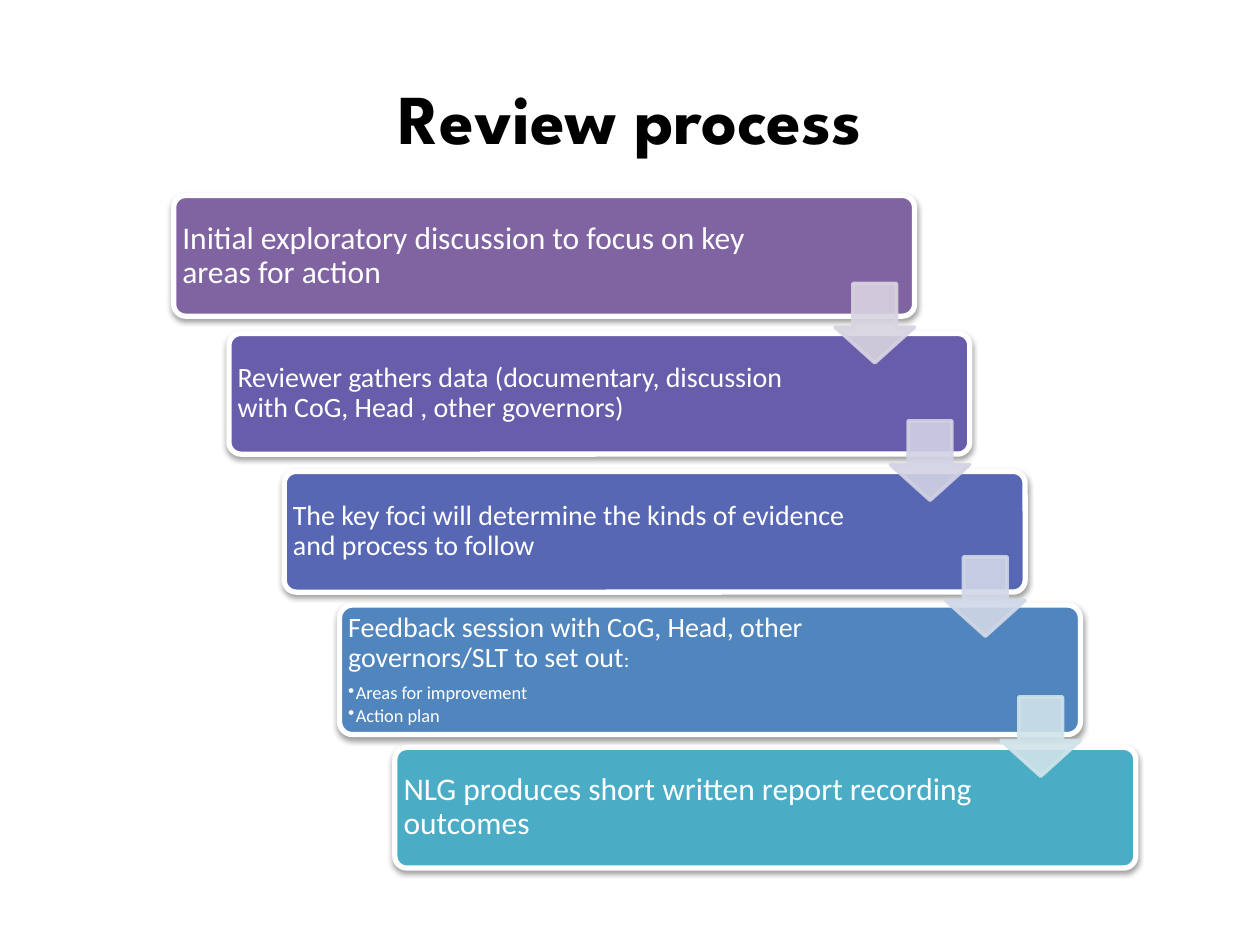
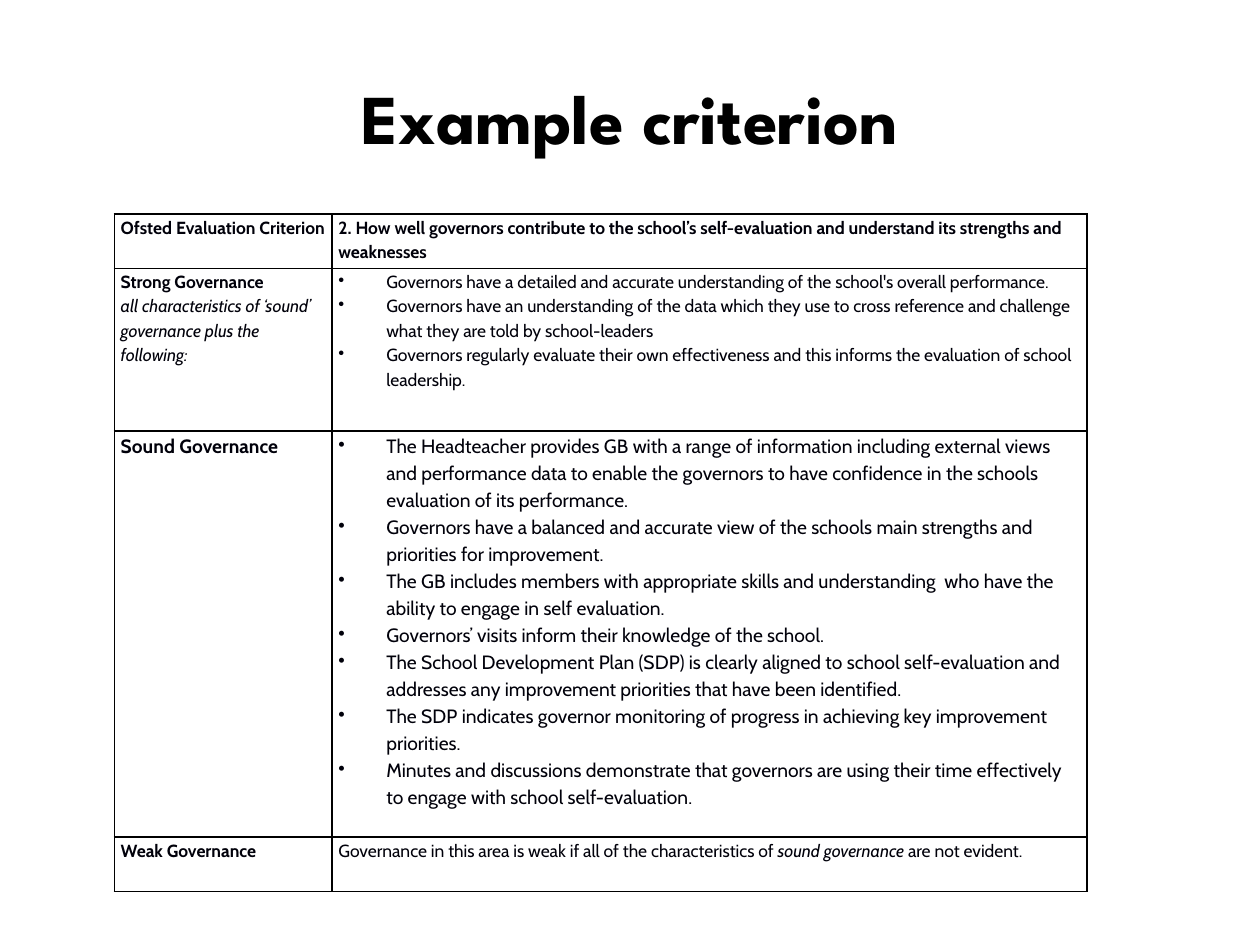
from lxml import etree
from pptx import Presentation
from pptx.dml.color import RGBColor
from pptx.enum.shapes import MSO_SHAPE
from pptx.enum.text import MSO_ANCHOR, PP_ALIGN
from pptx.oxml.ns import qn
from pptx.util import Pt

ROUND, ARROW = MSO_SHAPE.ROUNDED_RECTANGLE, MSO_SHAPE.DOWN_ARROW
MIDDLE, TOP = MSO_ANCHOR.MIDDLE, MSO_ANCHOR.TOP
LEFT, CENTER = PP_ALIGN.LEFT, PP_ALIGN.CENTER

BLACK = RGBColor(0x00, 0x00, 0x00)
WHITE = RGBColor(0xFF, 0xFF, 0xFF)
INK = RGBColor(0x00, 0x00, 0x0A)
PURPLE = RGBColor(0x80, 0x64, 0xA2)
VIOLET = RGBColor(0x68, 0x5D, 0xAB)
INDIGO = RGBColor(0x57, 0x67, 0xB4)
BLUE = RGBColor(0x51, 0x85, 0xBD)
TEAL = RGBColor(0x4B, 0xAC, 0xC6)
MAUVE = RGBColor(0xD8, 0xD3, 0xE0)
LILAC = RGBColor(0xD2, 0xD2, 0xE4)
MIST = RGBColor(0xD1, 0xD8, 0xE7)
ICE = RGBColor(0xD0, 0xE3, 0xEA)

HEAD, BODY, GRID = "League Spartan", "Calibri", "Cabin"

STEPS = [
    (PURPLE, 69, 18, "Initial exploratory discussion to focus on key areas for action", []),
    (VIOLET, 69, 16, "Reviewer gathers data (documentary, discussion with CoG, Head , "
                     "other governors)", []),
    (INDIGO, 69, 16, "The key foci will determine the kinds of evidence and process "
                     "to follow", []),
    (BLUE, 74, 16, [("Feedback session with CoG, Head, other governors/SLT to set out", {}),
                    (":", {"size": 12})],
     ["Areas for improvement", "Action plan"]),
    (TEAL, 69, 18, "NLG produces short written report recording outcomes", []),
]
ARROWS = [(MAUVE, 162), (LILAC, 240.5), (MIST, 318.2), (ICE, 398.2)]

STRONG = [
    "Governors have a detailed and accurate understanding of the school's overall performance.",
    "Governors have an understanding of the data which they use to cross reference and "
    "challenge what they are told by school-leaders",
    "Governors regularly evaluate their own effectiveness and this informs the evaluation "
    "of school leadership.",
]
SOUND = [
    "The Headteacher provides GB with a range of information including external views and "
    "performance data to enable the governors to have confidence in the schools evaluation "
    "of its performance.",
    "Governors have a balanced and accurate view of the schools main strengths and "
    "priorities for improvement.",
    "The GB includes members with appropriate skills and understanding  who have the "
    "ability to engage in self evaluation.",
    "Governors’ visits inform their knowledge of the school.",
    "The School Development Plan (SDP) is clearly aligned to school self-evaluation and "
    "addresses any improvement priorities that have been identified.",
    "The SDP indicates governor monitoring of progress in achieving key improvement "
    "priorities.",
    "Minutes and discussions demonstrate that governors are using their time effectively "
    "to engage with school self-evaluation.",
]
BOLD, SLANT = {"bold": True}, {"italic": True}
ROWS = [
    (31, 10, [("Ofsted Evaluation Criterion", BOLD)],
     [("2. How well governors contribute to the school’s self-evaluation and understand "
       "its strengths and weaknesses", BOLD)]),
    (93, 10, [("Strong Governance", BOLD),
              ("all characteristics of ‘sound’ governance plus the following:", SLANT)],
     [(item, {"indent": 27.4}) for item in STRONG]),
    (232, 11, [("Sound Governance", BOLD)], [(item, {"indent": 27.4}) for item in SOUND]),
    (31, 10, [("Weak Governance", BOLD)],
     [([("Governance in this area is weak if all of the characteristics of ", {}),
        ("sound governance ", SLANT), ("are not evident.", {})], {})]),
]


def node(parent, tag, **attrs):
    return etree.SubElement(parent, qn(tag), {k: str(v) for k, v in attrs.items()})


def write(frame, text, size=10, face=BODY, color=WHITE, bold=False, italic=False,
          align=LEFT, line=1.0, after=0, indent=0):
    para = frame.paragraphs[0]
    if para.runs:
        para = frame.add_paragraph()
    para.alignment, para.line_spacing, para.space_after = align, line, Pt(after)
    if indent:
        props = para._p.get_or_add_pPr()
        props.set("marL", str(Pt(indent)))
        props.set("indent", str(-Pt(indent)))
        node(props, "a:buChar", char="•")
    for words, extra in [(text, {})] if isinstance(text, str) else text:
        run = para.add_run()
        run.text = words
        font = run.font
        font.name, font.size = face, Pt(extra.get("size", size))
        font.bold, font.italic = bold, extra.get("italic", italic)
        font.color.rgb = color


def frame_at(slide, x, y, w, h, pad):
    frame = slide.shapes.add_textbox(Pt(x), Pt(y), Pt(w), Pt(h)).text_frame
    frame.word_wrap, frame.vertical_anchor = True, MIDDLE
    frame.margin_left = frame.margin_right = Pt(pad)
    frame.margin_top = frame.margin_bottom = Pt(pad)
    return frame


def shape_at(slide, kind, x, y, w, h, fill, edge, width, adjust):
    shape = slide.shapes.add_shape(kind, Pt(x), Pt(y), Pt(w), Pt(h))
    for i, value in enumerate(adjust):
        shape.adjustments[i] = value
    shape.shadow.inherit = False
    shape.fill.solid()
    shape.fill.fore_color.rgb = fill
    shape.line.color.rgb = edge
    shape.line.width = Pt(width)
    return shape


def add_title(slide, text):
    frame = frame_at(slide, 36, 21.6, 648, 90, 4)
    write(frame, text, size=40, face=HEAD, color=BLACK, bold=True, align=CENTER)


def add_card(slide, x, y, w, h, fill, size, text, items):
    card = shape_at(slide, ROUND, x, y, w, h, fill, WHITE, 3, [0.1])
    effects = card._element.spPr.find(qn("a:effectLst"))
    shade = node(effects, "a:outerShdw", blurRad=Pt(3.1), dist=Pt(1.6),
                 dir=5400000, rotWithShape=0)
    node(node(shade, "a:srgbClr", val=BLACK), "a:alpha", val=38000)
    frame = frame_at(slide, x, y, 347 if size < 18 else 345, h, 5)
    write(frame, text, size=size, line=0.9, after=6 if items else 0)
    for item in items:
        write(frame, item, size=10.5, line=0.9, after=1.5, indent=4.3)


def add_arrow(slide, x, y, side, color):
    arrow = shape_at(slide, ARROW, x, y, side, side, color, color, 2, [0.55, 0.45])
    for tint in arrow._element.spPr.iter(qn("a:srgbClr")):
        node(tint, "a:alpha", val=90000)


def add_steps(slide, x, y, w):
    shift, pitch, side = 31.6, 78.85, 45.4
    for i, (fill, h, size, text, items) in enumerate(STEPS):
        mid = y + 34.5 + i * pitch
        add_card(slide, x + i * shift, mid - h / 2, w, h, fill, size, text, items)
    for i, (color, top) in enumerate(ARROWS):
        add_arrow(slide, x + i * shift + w - side, top, side, color)


def fill_cell(cell, paras, size):
    cell.margin_left = cell.margin_right = Pt(3.6)
    cell.margin_top = cell.margin_bottom = 0
    cell.vertical_anchor = TOP
    props = cell._tc.get_or_add_tcPr()
    for side in ("a:lnL", "a:lnR", "a:lnT", "a:lnB"):
        edge = node(props, side, w=Pt(1))
        node(node(edge, "a:solidFill"), "a:srgbClr", val=BLACK)
    cell.fill.background()
    for text, style in paras:
        write(cell.text_frame, text, size=size, face=GRID, color=INK, line=1.15, **style)


def add_grid(slide, x, y, widths):
    high = sum(row[0] for row in ROWS)
    table = slide.shapes.add_table(len(ROWS), len(widths), Pt(x), Pt(y),
                                   Pt(sum(widths)), Pt(high)).table
    table.first_row = table.horz_banding = False
    for col, width in zip(table.columns, widths):
        col.width = Pt(width)
    for r, (height, size, *cells) in enumerate(ROWS):
        table.rows[r].height = Pt(height)
        for c, paras in enumerate(cells):
            fill_cell(table.cell(r, c), paras, size)


def main():
    deck = Presentation()
    deck.slide_width, deck.slide_height = Pt(720), Pt(540)
    blank = deck.slide_layouts[6]

    review = deck.slides.add_slide(blank)
    add_title(review, "Review process")
    add_steps(review, 99.2, 111.7, 423.4)

    sample = deck.slides.add_slide(blank)
    add_title(sample, "Example criterion")
    add_grid(sample, 65.4, 122.4, [124.4, 431.4])

    deck.save("out.pptx")


if __name__ == "__main__":
    main()
